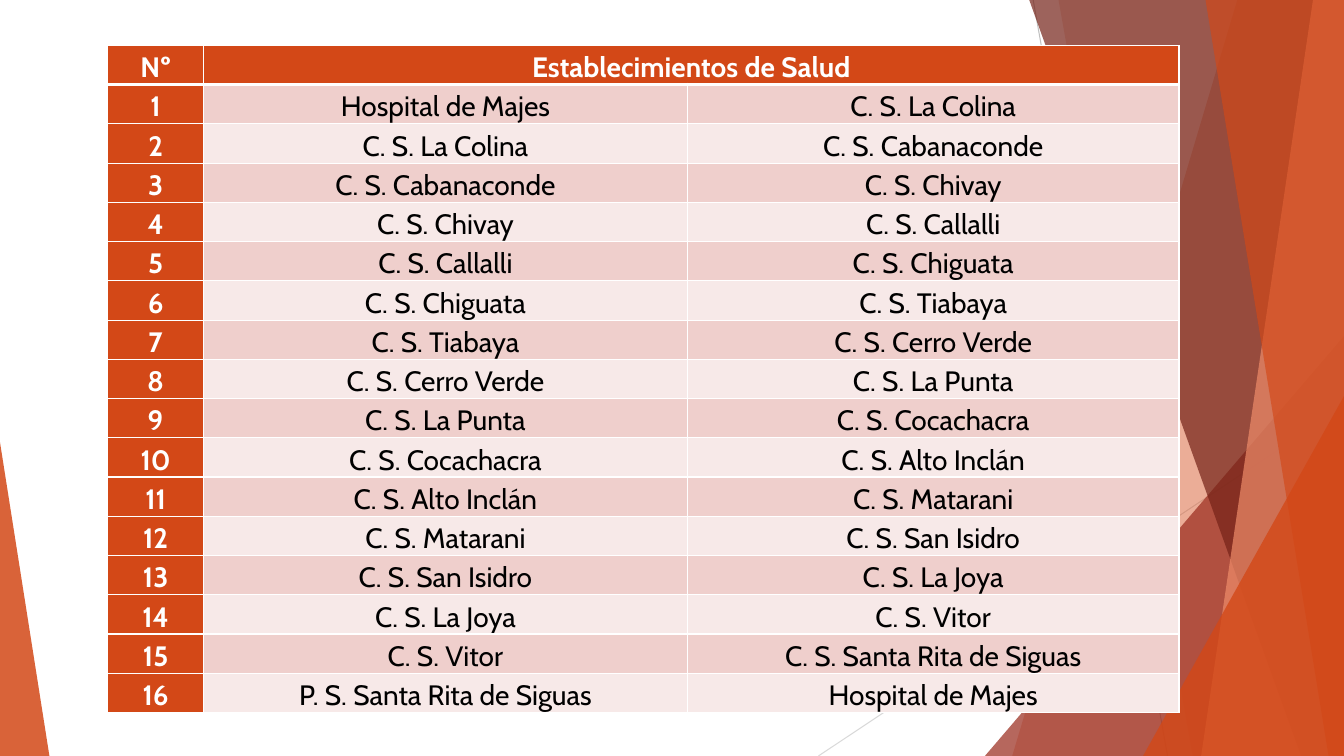
from lxml.etree import SubElement
from pptx import Presentation
from pptx.dml.color import RGBColor
from pptx.enum.shapes import MSO_CONNECTOR as Connector, MSO_SHAPE as Preset
from pptx.enum.text import MSO_ANCHOR as Anchor, PP_ALIGN as Align
from pptx.oxml.ns import qn
from pptx.util import Pt

WIDTH, HEIGHT = 960, 540
TOP = -0.6
ORANGE, WHITE, BLACK = "D34817", "FFFFFF", "000000"
BANDS = ("EFCFCC", "F7E9E8")
COLUMN_WIDTHS = (68.4, 345.6, 351.2)
ROW_HEIGHT = 27.6
HOSPITAL = "Hospital de Majes"
TOWNS = (
    "La Colina", "Cabanaconde", "Chivay", "Callalli", "Chiguata",
    "Tiabaya", "Cerro Verde", "La Punta", "Cocachacra", "Alto Inclán",
    "Matarani", "San Isidro", "La Joya", "Vitor", "Santa Rita de Siguas",
)


def color(value):
    """Turn a hex string into a colour."""
    return RGBColor.from_string(value)


def paint(shape, fill, opacity):
    """Give a shape a see-through fill with no line or shadow."""
    shape.shadow.inherit = False
    shape.line.fill.background()
    shape.fill.solid()
    shape.fill.fore_color.rgb = color(fill)
    fill_color = shape.fill._xPr.find(qn("a:solidFill"))[0]
    SubElement(fill_color, qn("a:alpha"), val=str(opacity * 1000))


def add_thin_line(slide, start, end, line_color):
    """Draw a thin straight line."""
    line = slide.shapes.add_connector(
        Connector.STRAIGHT, *(Pt(value) for value in (*start, *end)))
    line.line.color.rgb = color(line_color)
    line.line.width = Pt(0.75)
    SubElement(line._element.spPr, qn("a:effectLst"))


def add_right_panel(slide, top_x, bottom_x, fill, opacity):
    """Draw a slanted panel that reaches the right edge of the slide."""
    builder = slide.shapes.build_freeform(Pt(top_x), Pt(TOP))
    corners = ((WIDTH, TOP), (WIDTH, HEIGHT), (bottom_x, HEIGHT))
    builder.add_line_segments([(Pt(x), Pt(y)) for x, y in corners])
    paint(builder.convert_to_shape(), fill, opacity)


def add_bottom_triangle(slide, left, top, width, apex, fill, opacity):
    """Draw a triangle that stands on the bottom edge of the slide."""
    triangle = slide.shapes.add_shape(
        Preset.ISOSCELES_TRIANGLE, Pt(left), Pt(top), Pt(width), Pt(HEIGHT - top))
    triangle.adjustments[0] = apex
    paint(triangle, fill, opacity)


def add_borders(cell, top_width, bottom_width):
    """Put white borders around a table cell."""
    properties = cell._tc.get_or_add_tcPr()
    widths = {"a:lnL": 1, "a:lnR": 1, "a:lnT": top_width, "a:lnB": bottom_width}
    for side, width in widths.items():
        line = SubElement(properties, qn(side), w=str(Pt(width)))
        SubElement(SubElement(line, qn("a:solidFill")), qn("a:srgbClr"), val=WHITE)


def format_cell(cell, text, fill, text_color, bold):
    """Fill a table cell with centred text."""
    cell.fill.solid()
    cell.fill.fore_color.rgb = color(fill)
    cell.vertical_anchor = Anchor.MIDDLE
    cell.margin_left = cell.margin_right = Pt(3.6)
    cell.margin_top = cell.margin_bottom = 0
    cell.text_frame.text = text
    paragraph = cell.text_frame.paragraphs[0]
    paragraph.alignment = Align.CENTER
    paragraph.line_spacing = 1.15
    font = paragraph.font
    if paragraph.runs:
        font = paragraph.runs[0].font
    font.name = "Cabin"
    font.size = Pt(20)
    font.bold = bold
    font.color.rgb = color(text_color)


def add_center_table(slide, rows):
    """Add the numbered table of health centres."""
    frame = slide.shapes.add_table(
        len(rows), len(COLUMN_WIDTHS), Pt(77), Pt(32.4),
        Pt(sum(COLUMN_WIDTHS)), Pt(ROW_HEIGHT * len(rows)))
    table = frame.table
    table.horz_banding = False
    for column, width in zip(table.columns, COLUMN_WIDTHS):
        column.width = Pt(width)
    for row_index, values in enumerate(rows):
        table.rows[row_index].height = Pt(ROW_HEIGHT)
        for column_index, text in enumerate(values):
            cell = table.cell(row_index, column_index)
            heading = row_index == 0 or column_index == 0
            add_borders(cell, 3 if row_index == 1 else 1, 3 if row_index == 0 else 1)
            fill = ORANGE if heading else BANDS[(row_index - 1) % 2]
            format_cell(cell, text, fill, WHITE if heading else BLACK, heading)
    table.cell(0, 1).merge(table.cell(0, 2))


def add_background(slide):
    """Draw the overlapping facets behind the table."""
    add_thin_line(slide, (738, 0), (834, HEIGHT), "BFBFBF")
    add_thin_line(slide, (WIDTH, 290), (584.6, HEIGHT), "D9D9D9")
    add_right_panel(slide, 884, 723, ORANGE, 30)
    add_right_panel(slide, 756, 852, ORANGE, 20)
    add_bottom_triangle(slide, 703.5, 240, 256.5, 1, "9B2D1F", 72)
    add_right_panel(slide, 735, 929.5, "742217", 70)
    add_right_panel(slide, 938, 858, "EF8C6A", 70)
    add_right_panel(slide, 861, 949, ORANGE, 65)
    add_bottom_triangle(slide, 816.5, 283, 143.5, 1, ORANGE, 80)
    add_bottom_triangle(slide, 0, 316, 35.3, 0, ORANGE, 85)


def main():
    """Build and save the slide."""
    presentation = Presentation()
    presentation.slide_width, presentation.slide_height = Pt(WIDTH), Pt(HEIGHT)
    slide = presentation.slides.add_slide(presentation.slide_layouts[6])
    add_background(slide)
    centers = [f"C. S. {town}" for town in TOWNS]
    first_column = [HOSPITAL, *centers[:-1], f"P. S. {TOWNS[-1]}"]
    second_column = [*centers, HOSPITAL]
    rows = [("Nº", "Establecimientos de Salud", "")]
    for number, pair in enumerate(zip(first_column, second_column), start=1):
        rows.append((str(number), *pair))
    add_center_table(slide, rows)
    presentation.save("out.pptx")


if __name__ == "__main__":
    main()
